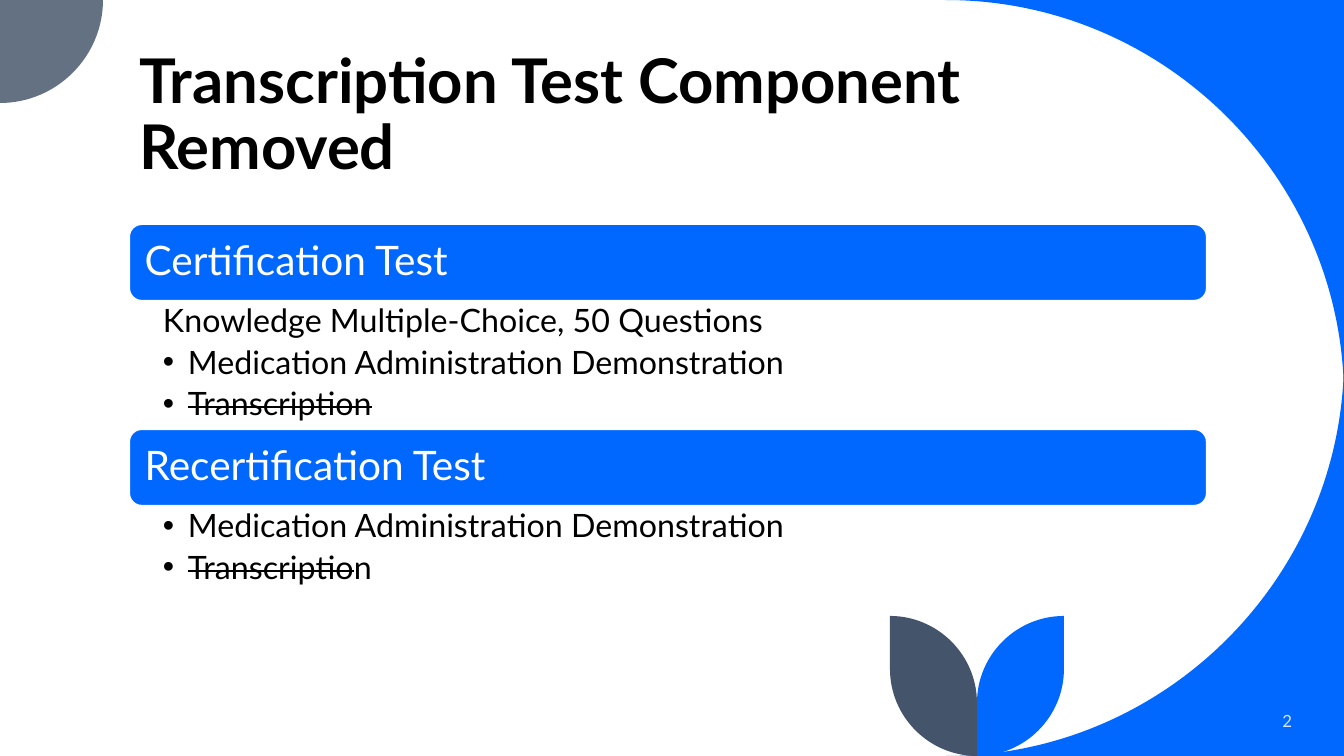
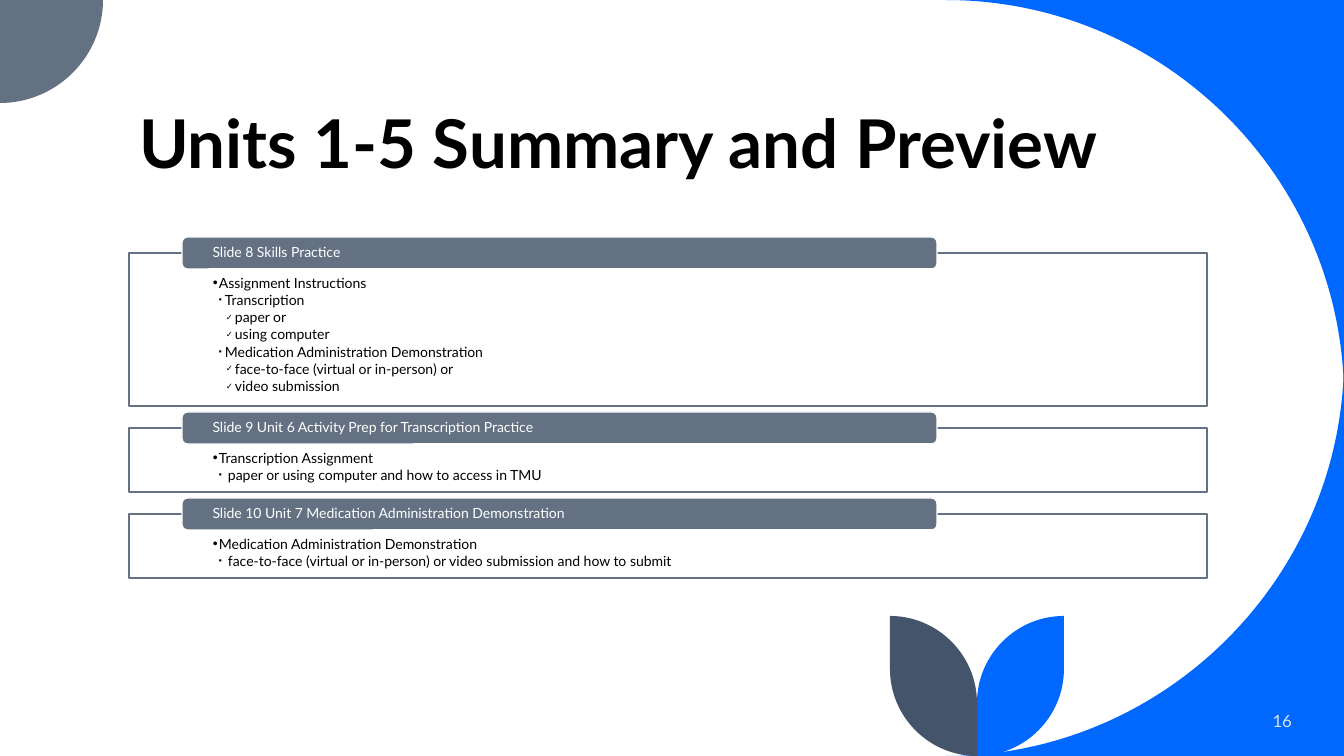
from lxml import etree
from pptx import Presentation
from pptx import util as u
from pptx.dml.color import RGBColor
from pptx.enum import shapes, text
from pptx.oxml import ns

WIDE, HIGH = 1344, 756
SCALE = 12192000 / WIDE
FONT = "Lato"
MARK_FONT = "Arial"
BLUE = RGBColor(0x00, 0x68, 0xFF)
GREY = RGBColor(0x63, 0x71, 0x83)
SLATE = RGBColor(0x44, 0x54, 0x6A)
PALE = RGBColor(0xDA, 0xE5, 0xEF)
BLACK = RGBColor(0, 0, 0)
WHITE = RGBColor(255, 255, 255)

LEFT, SPAN = 129, 1078
TITLE = (LEFT, 42, SPAN, 146)
NUMBER = (1120, 702, 182, 41)
ROUND = 0.55  # handle length of a quarter circle, as a share of its radius

# Bullet, bullet size in percent, left margin and hang in px
PLAIN = (None, 100, 25, 25)
MAIN = ("•", 100, 25, 25)
DOT = ("•", 100, 6, 6)
BOX = ("▪", 60, 12, 6)
WIDE_BOX = ("▪", 60, 15, 9)
TICK = ("✓", 60, 22, 9)

# Heading, list height, items as (level, (text, struck), ...)
TESTS = [
    ("Certification Test", 128, [
        (PLAIN, ("Knowledge Multiple-Choice, 50 Questions", False)),
        (MAIN, ("Medication Administration Demonstration", False)),
        (MAIN, ("Transcription", True)),
    ]),
    ("Recertification Test", 86, [
        (MAIN, ("Medication Administration Demonstration", False)),
        (MAIN, ("Transcriptio", True), ("n", False)),
    ]),
]

# Heading, frame height, items
UNITS = [
    ("Slide 8 Skills Practice", 153, [
        (DOT, ("Assignment Instructions", False)),
        (BOX, ("Transcription", False)),
        (TICK, ("paper or", False)),
        (TICK, ("using computer", False)),
        (BOX, ("Medication Administration Demonstration", False)),
        (TICK, ("face-to-face (virtual or in-person) or", False)),
        (TICK, ("video submission", False)),
    ]),
    ("Slide 9 Unit 6 Activity Prep for Transcription Practice", 64, [
        (DOT, ("Transcription Assignment", False)),
        (WIDE_BOX, ("paper or using computer and how to access in TMU", False)),
    ]),
    ("Slide 10 Unit 7 Medication Administration Demonstration", 64, [
        (DOT, ("Medication Administration Demonstration", False)),
        (WIDE_BOX, ("face-to-face (virtual or in-person) or video submission "
                    "and how to submit", False)),
    ]),
]


def px(n):
    return u.Emu(round(n * SCALE))


def paint(shape, fill, line=None, weight=1):
    shape.shadow.inherit = False
    shape.fill.solid()
    shape.fill.fore_color.rgb = fill
    if line is None:
        shape.line.fill.background()
    else:
        shape.line.color.rgb = line
        shape.line.width = u.Pt(weight)


def bend(start, hub, end):
    """Two handles and the end of a quarter circle that leans to hub."""
    near, far = [tuple(a + ROUND * (b - a) for a, b in zip(tip, hub))
                 for tip in (start, end)]
    return [near, far, end]


def outline(slide, start, steps, fill):
    """Draw steps of (end,) as lines and of (hub, end) as curves."""
    points, curves, last = [], [], start
    for step in steps:
        if len(step) == 2:
            curves.append(len(points))
            points += bend(last, *step)
        else:
            points += step
        last = step[-1]
    pen = slide.shapes.build_freeform(*map(px, start), scale=1)
    pen.add_line_segments([tuple(map(px, p)) for p in points], close=True)
    shape = pen.convert_to_shape()
    lines = list(shape._element.iter(ns.qn("a:lnTo")))
    for i in curves:
        curve = etree.Element(ns.qn("a:cubicBezTo"))
        lines[i].addprevious(curve)
        for line in lines[i:i + 3]:
            curve.append(line[0])
            line.getparent().remove(line)
    paint(shape, fill)


def setup(shape, anchor, pads=None):
    frame = shape.text_frame
    frame.word_wrap = True
    frame.auto_size = text.MSO_AUTO_SIZE.NONE
    frame.vertical_anchor = anchor
    if pads:
        (frame.margin_left, frame.margin_top,
         frame.margin_right, frame.margin_bottom) = map(px, pads)
    return frame


def write(para, words, size, color, bold=False, struck=False):
    run = para.add_run()
    run.text = words
    font = run.font
    font.name, font.size, font.bold = FONT, u.Pt(size), bold
    font.color.rgb = color
    if struck:
        run._r.get_or_add_rPr().set("strike", "sngStrike")


def label(shape, words, size, color, anchor=text.MSO_ANCHOR.MIDDLE,
          align=text.PP_ALIGN.LEFT, pads=None, bold=False):
    para = setup(shape, anchor, pads).paragraphs[0]
    para.alignment = align
    para.line_spacing = 0.9
    write(para, words, size, color, bold)


def indent(para, level):
    mark, percent, left, hang = level
    props = para._p.get_or_add_pPr()
    props.set("marL", str(px(left)))
    props.set("indent", str(-px(hang)))
    if mark:
        for tag, key, value in (("a:buSzPct", "val", str(percent * 1000)),
                                ("a:buFont", "typeface", MARK_FONT),
                                ("a:buChar", "char", mark)):
            etree.SubElement(props, ns.qn(tag)).set(key, value)


def fill_list(shape, items, size, after, pads):
    frame = setup(shape, text.MSO_ANCHOR.TOP, pads)
    for i, (level, *runs) in enumerate(items):
        para = frame.add_paragraph() if i else frame.paragraphs[0]
        indent(para, level)
        para.alignment = text.PP_ALIGN.LEFT
        para.line_spacing = 0.9
        para.space_after = u.Pt(after)
        for words, struck in runs:
            write(para, words, size, BLACK, struck=struck)


def block(slide, kind, place, fill, line, weight=1):
    shape = slide.shapes.add_shape(kind, *map(px, place))
    paint(shape, fill, line, weight)
    return shape


def leaf(slide, stem, side, fill):
    """Side is 1 for a leaf right of the stem and -1 for one left of it."""
    size, top = 87, 616
    tip = stem + side * size
    low, high = HIGH - size, top + size
    outline(slide, (tip, top),
            [((tip, low),), ((tip, HIGH), (stem, HIGH)),
             ((stem, high),), ((stem, top), (tip, top))], fill)


def decor(slide):
    """Corner curves and the pair of leaves."""
    r, small, stem = 398, 103, 977
    for edge, end in ((0, r), (HIGH, HIGH - r)):
        corner = (WIDE, edge)
        outline(slide, corner,
                [((WIDE - r, edge),), (corner, (WIDE, end))], BLUE)
    outline(slide, (0, 0),
            [((small, 0),), ((small, small), (0, small))], GREY)
    leaf(slide, stem, 1, BLUE)
    leaf(slide, stem, -1, SLATE)


def start(deck, title, size, number):
    slide = deck.slides.add_slide(deck.slide_layouts[5])
    decor(slide)
    head = slide.shapes.title
    head.left, head.top, head.width, head.height = map(px, TITLE)
    label(head, title, size, BLACK, text.MSO_ANCHOR.BOTTOM, bold=True)
    note = slide.shapes.add_textbox(*map(px, NUMBER))
    label(note, number, 12, PALE, align=text.PP_ALIGN.RIGHT)
    return slide


def tests(slide):
    top, band = 224, 77
    for name, high, items in TESTS:
        bar = block(slide, shapes.MSO_SHAPE.ROUNDED_RECTANGLE,
                    (LEFT, top, SPAN, band), BLUE, WHITE, 1.5)
        label(bar, name, 29, WHITE, pads=(12, 12, 12, 12))
        top += band
        body = slide.shapes.add_textbox(*map(px, (LEFT, top, SPAN, high)))
        fill_list(body, items, 23, 4.6, (34, 4, 23, 4))
        top += high


def units(slide):
    top, gap = 253, 22
    for name, high, items in UNITS:
        body = block(slide, shapes.MSO_SHAPE.RECTANGLE,
                     (LEFT, top, SPAN, high), WHITE, GREY)
        fill_list(body, items, 10, 1.5, (84, 23, 84, 8))
        tab = block(slide, shapes.MSO_SHAPE.ROUNDED_RECTANGLE,
                    (182, top - 16, 755, 32), GREY, WHITE)
        label(tab, name, 10, WHITE, pads=(29, 0, 29, 0))
        top += high + gap


def main():
    deck = Presentation()
    deck.slide_width, deck.slide_height = px(WIDE), px(HIGH)
    tests(start(deck, "Transcription Test Component Removed", 44, "2"))
    units(start(deck, "Units 1-5 Summary and Preview", 48, "16"))
    deck.save("out.pptx")


if __name__ == "__main__":
    main()
